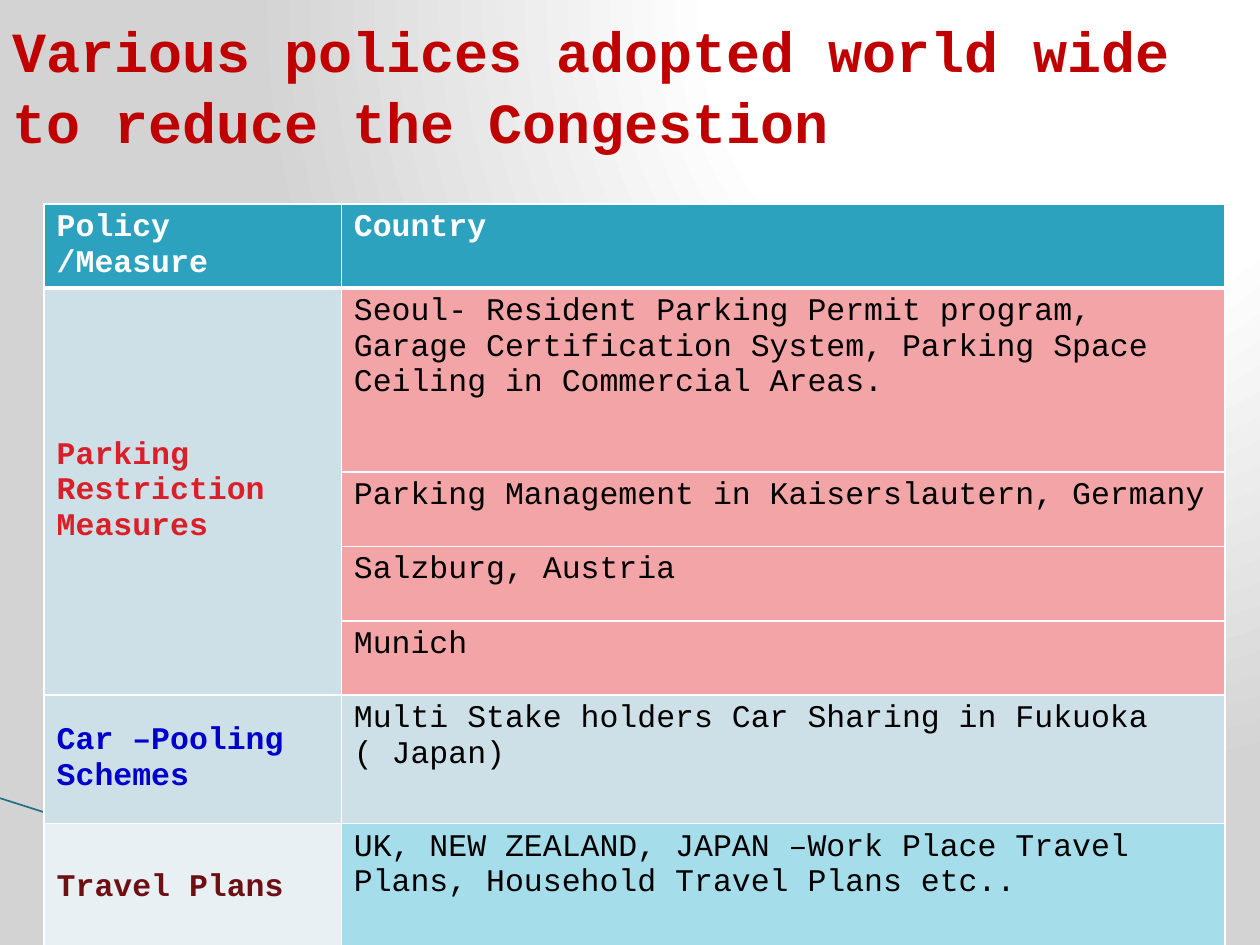
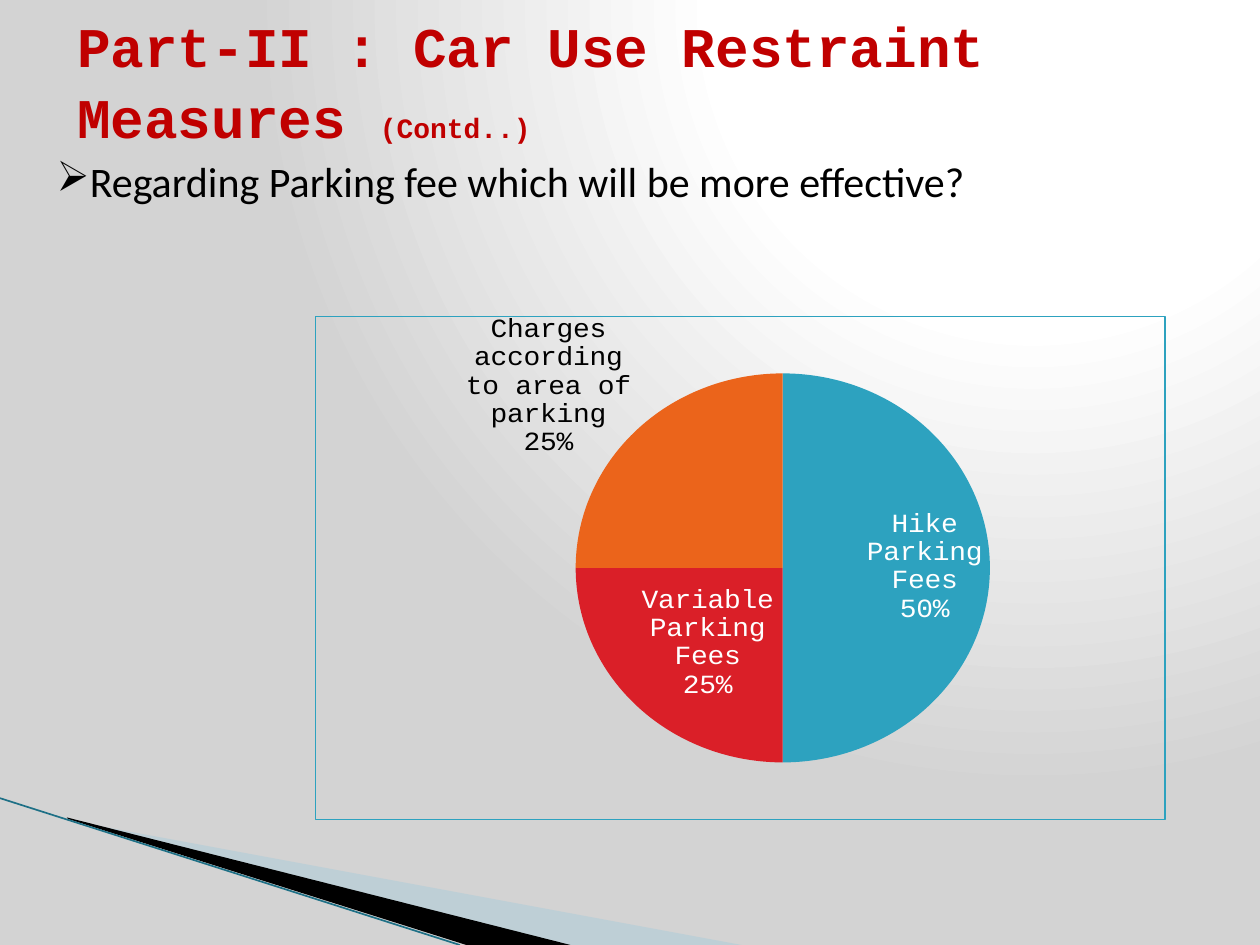
from dataclasses import dataclass

from lxml import etree
from pptx import Presentation
from pptx.chart.data import CategoryChartData
from pptx.dml.color import RGBColor
from pptx.enum.chart import XL_CHART_TYPE as ChartType, XL_LABEL_POSITION as LabelPosition
from pptx.enum.shapes import MSO_CONNECTOR as Connector
from pptx.enum.text import MSO_ANCHOR as Anchor, MSO_AUTO_SIZE as AutoSize
from pptx.oxml import parse_xml
from pptx.oxml.ns import nsdecls, qn
from pptx.util import Cm, Pt


@dataclass(frozen=True)
class Theme:
    mono: str = "Courier New"
    sans: str = "Calibri"
    title_size: float = 32
    note_size: float = 16
    body_size: float = 24
    cell_size: float = 18
    label_size: float = 16
    title: str = "C00000"
    black: str = "000000"
    white: str = "FFFFFF"
    grey: str = "D3D3D3"
    teal: str = "2DA2BF"
    dark_teal: str = "1E7086"
    red: str = "DA1F28"
    orange: str = "EB641B"
    blue: str = "0000CC"
    maroon: str = "6D1014"
    pale_red: str = "F2A4A7"
    pale_blue: str = "CDE0E8"
    paler_blue: str = "E8F0F4"
    pale_teal: str = "A6DDEA"
    swoosh: str = "A0CBDC"


def rgb(color):
    return RGBColor.from_string(color)


def style_font(font, name, size, color, bold=False):
    font.name = name
    font.size = Pt(size)
    font.bold = bold
    font.color.rgb = rgb(color)


class Builder:
    """Holds the theme, the deck and the page being filled."""

    def __init__(self, theme):
        self.theme = theme
        self.deck = Presentation()
        self.deck.slide_width, self.deck.slide_height = Cm(25.4), Cm(19.05)
        self.page = None
        self.set_background()

    def set_background(self):
        """Give the master a circular gradient that is bright at the upper right."""
        theme = self.theme
        stops = "".join(
            f'<a:gs pos="{place * 1000}"><a:srgbClr val="{color}"/></a:gs>'
            for place, color in ((0, theme.white), (40, theme.white), (100, theme.grey)))
        common = self.deck.slide_master.element.cSld
        for old in common.findall(qn("p:bg")):
            common.remove(old)
        common.insert(0, parse_xml(
            f'<p:bg {nsdecls("p", "a")}><p:bgPr><a:gradFill rotWithShape="1">'
            f'<a:gsLst>{stops}</a:gsLst><a:path path="circle">'
            '<a:fillToRect l="65000" t="0" r="0" b="98000"/></a:path>'
            '</a:gradFill><a:effectLst/></p:bgPr></p:bg>'))

    def new_page(self):
        theme = self.theme
        self.page = self.deck.slides.add_slide(self.deck.slide_layouts[5])
        self.outline([(1.4, 16.54), (14.95, 19.05), (11.45, 19.05), (1.4, 16.51)],
                     theme.swoosh, alpha=40)
        self.outline([(1.35, 16.48), (11.5, 19.05), (9.4, 19.05), (1.37, 16.51)],
                     theme.black)
        self.line((0, 16.09), (9.27, 19.05), theme.dark_teal, 0.95)

    def outline(self, points, color, alpha=100):
        corners = [(Cm(x), Cm(y)) for x, y in points]
        builder = self.page.shapes.build_freeform(*corners[0])
        builder.add_line_segments(corners[1:], close=True)
        shape = builder.convert_to_shape()
        shape.shadow.inherit = False
        shape.fill.solid()
        shape.fill.fore_color.rgb = rgb(color)
        shape.line.fill.background()
        if alpha < 100:
            paint = shape.element.spPr.find(qn("a:solidFill"))[0]
            etree.SubElement(paint, qn("a:alpha")).set("val", str(alpha * 1000))

    def line(self, start, end, color, width):
        ends = [Cm(value) for value in (*start, *end)]
        connector = self.page.shapes.add_connector(Connector.STRAIGHT, *ends)
        connector.line.color.rgb = rgb(color)
        connector.line.width = Pt(width)
        etree.SubElement(connector.element.spPr, qn("a:effectLst"))

    def title(self, text, left, top, width, size=None, note=""):
        theme = self.theme
        box = self.page.shapes.title
        box.left, box.top, box.width, box.height = Cm(left), Cm(top), Cm(width), Cm(3.18)
        frame = box.text_frame
        frame.word_wrap = True
        frame.auto_size = AutoSize.NONE
        frame.vertical_anchor = Anchor.MIDDLE
        frame.text = text
        para = frame.paragraphs[0]
        para.alignment = 1
        para.line_spacing = 1.05
        style_font(para.runs[0].font, theme.mono, size or theme.title_size, theme.title, True)
        if note:
            span = para.add_run()
            span.text = note
            style_font(span.font, theme.mono, theme.note_size, theme.title, True)

    def bullet(self, text, left, top, width, height):
        theme = self.theme
        box = self.page.shapes.add_textbox(Cm(left), Cm(top), Cm(width), Cm(height))
        frame = box.text_frame
        frame.word_wrap = True
        frame.text = text
        para = frame.paragraphs[0]
        properties = para._p.get_or_add_pPr()
        indent = Cm(0.64)
        properties.set("marL", str(indent))
        properties.set("indent", str(-indent))
        etree.SubElement(properties, qn("a:buChar")).set("char", "➢")
        style_font(para.runs[0].font, theme.sans, theme.body_size, theme.black)

    def table(self, left, top, widths, heights):
        frame = self.page.shapes.add_table(len(heights), len(widths), Cm(left), Cm(top),
                                           Cm(sum(widths)), Cm(sum(heights)))
        grid = frame.table
        for column, width in zip(grid.columns, widths):
            column.width = Cm(width)
        for row, height in zip(grid.rows, heights):
            row.height = Cm(height)
        return grid

    def cell(self, cell, text, fill, color, bold=False, anchor=Anchor.TOP, bottom=1):
        cell.text = text
        cell.vertical_anchor = anchor
        cell.fill.solid()
        cell.fill.fore_color.rgb = rgb(fill)
        for span in cell.text_frame.paragraphs[0].runs:
            style_font(span.font, self.theme.mono, self.theme.cell_size, color, bold)
        properties = cell._tc.get_or_add_tcPr()
        for index, side in enumerate("LRTB"):
            width = Pt(bottom if side == "B" else 1)
            properties.insert(index, parse_xml(
                f'<a:ln{side} {nsdecls("a")} w="{width}"><a:solidFill>'
                f'<a:srgbClr val="{self.theme.white}"/></a:solidFill></a:ln{side}>'))

    def pie(self, slices, left, top, width, height):
        """Draw slices given as (name, value, fill, label colour, label position)."""
        theme = self.theme
        data = CategoryChartData()
        data.categories = [part[0] for part in slices]
        data.add_series("Series 1", [part[1] for part in slices])
        chart = self.page.shapes.add_chart(ChartType.PIE, Cm(left), Cm(top), Cm(width),
                                           Cm(height), data).chart
        chart.has_title = False
        chart.has_legend = False
        style_font(chart.font, theme.mono, 10, theme.black)
        plot = chart.plots[0]
        plot.vary_by_categories = True
        for point_index, (_, _, fill, color, position) in enumerate(slices):
            point = plot.series[0].points[point_index]
            point.format.fill.solid()
            point.format.fill.fore_color.rgb = rgb(fill)
            point.format.line.fill.background()
            label = point.data_label
            style_font(label.font, theme.mono, theme.label_size, color)
            label.position = position

        root = chart.element
        for tag, shown in (("showVal", "0"), ("showCatName", "1"), ("showPercent", "1")):
            for flag in root.xpath(f".//c:dLbls//c:{tag}"):
                flag.set("val", shown)
        for label in root.xpath(".//c:dLbl"):
            etree.SubElement(label, qn("c:separator")).text = "\n"

        area = root.find(qn("c:chart")).find(qn("c:plotArea"))
        for old in area.findall(qn("c:layout")):
            area.remove(old)
        sizes = "".join(f'<c:{tag} val="{value}"/>' for tag, value in (
            ("x", 0.143), ("y", 0.113), ("w", 0.814), ("h", 0.773)))
        area.insert(0, parse_xml(
            f'<c:layout {nsdecls("c")}><c:manualLayout><c:layoutTarget val="inner"/>'
            f'<c:xMode val="edge"/><c:yMode val="edge"/>{sizes}</c:manualLayout></c:layout>'))
        root.find(qn("c:chart")).addnext(parse_xml(
            f'<c:spPr {nsdecls("c", "a")}><a:noFill/><a:ln w="{Pt(0.75)}"><a:solidFill>'
            f'<a:srgbClr val="{theme.teal}"/></a:solidFill></a:ln></c:spPr>'))


def add_policies(build):
    theme = build.theme
    build.new_page()
    build.title("Various polices adopted world wide to reduce the Congestion",
                0, 0.1, 25.4, size=32.4)
    policies = [
        ("Parking Restriction Measures", theme.red, theme.pale_blue, theme.pale_red, [
            "Seoul- Resident Parking Permit program, Garage Certification System, "
            "Parking Space Ceiling in Commercial Areas.",
            "Parking Management in Kaiserslautern, Germany",
            "Salzburg, Austria",
            "Munich"]),
        ("Car –Pooling Schemes", theme.blue, theme.pale_blue, theme.pale_blue, [
            "Multi Stake holders Car Sharing in Fukuoka ( Japan)"]),
        ("Travel Plans", theme.maroon, theme.paler_blue, theme.pale_teal, [
            "UK, NEW ZEALAND, JAPAN –Work Place Travel Plans, "
            "Household Travel Plans etc.."]),
    ]
    grid = build.table(0.89, 4.11, [5.99, 17.81], [1.5, 3.71, 1.5, 1.5, 1.5, 2.59, 2.59])
    for column, heading in enumerate(("Policy /Measure", "Country")):
        build.cell(grid.cell(0, column), heading, theme.teal, theme.white, True, bottom=3)
    first = 1
    for policy, color, policy_fill, country_fill, countries in policies:
        for row, country in enumerate(countries, first):
            build.cell(grid.cell(row, 0), policy if row == first else "", policy_fill,
                       color, True, Anchor.MIDDLE)
            build.cell(grid.cell(row, 1), country, country_fill, theme.black)
        if len(countries) > 1:
            grid.cell(first, 0).merge(grid.cell(first + len(countries) - 1, 0))
        first += len(countries)


def add_parking_fees(build):
    theme = build.theme
    build.new_page()
    build.title("Part-II : Car Use Restraint Measures ", 1.3, 0, 22.86, note="(Contd..)")
    build.bullet("Regarding Parking fee which will be more effective?", 0.89, 3.02, 23.19, 2.5)
    build.pie([
        ("Hike Parking Fees", 50, theme.teal, theme.white, LabelPosition.INSIDE_END),
        ("Variable Parking Fees", 25, theme.red, theme.white, LabelPosition.INSIDE_END),
        ("Charges according to area of parking", 25, theme.orange, theme.black,
         LabelPosition.OUTSIDE_END),
    ], 6.35, 5.72, 17.15, 10.82)


def main():
    build = Builder(Theme())
    add_policies(build)
    add_parking_fees(build)
    build.deck.save("out.pptx")


if __name__ == "__main__":
    main()
